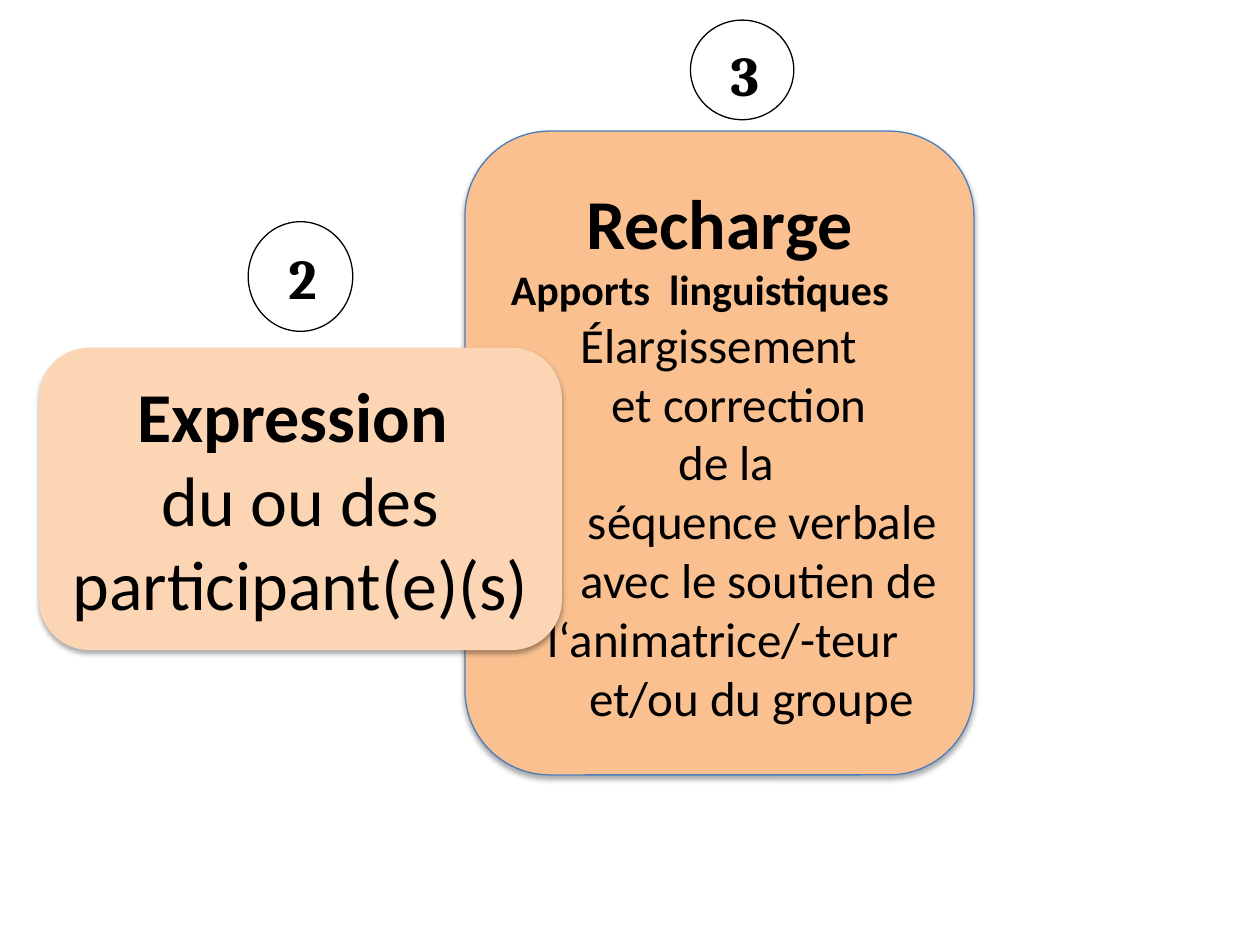
"""Build a slide with two overlapping numbered steps of a language activity."""
import lxml.etree
import pptx
import pptx.dml.color
import pptx.enum.shapes
import pptx.enum.text
import pptx.oxml.ns
import pptx.util

Inches = pptx.util.Inches
Pt = pptx.util.Pt
SHAPE = pptx.enum.shapes.MSO_SHAPE
ANCHOR = pptx.enum.text.MSO_ANCHOR
ALIGN = pptx.enum.text.PP_ALIGN
LEFT, CENTER, RIGHT = ALIGN.LEFT, ALIGN.CENTER, ALIGN.RIGHT


def rgb(value):
    """Turn a hex string into a colour."""
    return pptx.dml.color.RGBColor.from_string(value)


def add_block(kind, box, fill, line, anchor, font, paragraphs):
    """Add a filled shape with its paragraphs and return it."""
    s = slide.shapes.add_shape(kind, *[Inches(v) for v in box])
    s.shadow.inherit = False
    s.fill.solid()
    s.fill.fore_color.rgb = rgb(fill)
    if line:
        s.line.color.rgb = rgb(line)
        s.line.width = Pt(0.75)
    else:
        s.line.fill.background()
    tf = s.text_frame
    tf.word_wrap = True
    tf.vertical_anchor = anchor
    for i, (text, size, bold, align, indent) in enumerate(paragraphs):
        p = tf.add_paragraph() if i else tf.paragraphs[0]
        p.alignment = align
        if indent:
            p._p.get_or_add_pPr().set("marL", str(Inches(indent)))
        r = p.add_run()
        r.text = text
        r.font.name = font
        r.font.size = Pt(size)
        r.font.bold = bold
        r.font.color.rgb = rgb("000000")
    return s


prs = pptx.Presentation()
prs.slide_width = Inches(10)
prs.slide_height = Inches(7.5)
slide = prs.slides.add_slide(prs.slide_layouts[6])

recharge = [
    ("Recharge", 40, True, CENTER, 0),
    ("Apports  linguistiques", 24, True, LEFT, 0.07),
    ("Élargissement", 28, False, LEFT, 0.62),
    ("et correction", 28, False, LEFT, 0.87),
    ("de la", 28, False, LEFT, 1.4),
    ("séquence verbale", 28, False, RIGHT, 0),
    ("avec le soutien de", 28, False, RIGHT, 0),
    ("l‘animatrice/-teur", 28, False, LEFT, 0.36),
    ("et/ou du groupe", 28, False, LEFT, 0.69),
]
expression = [
    ("Expression ", 40, True, CENTER, 0),
    ("du ou des", 40, False, CENTER, 0),
    ("participant(e)(s)", 40, False, CENTER, 0),
]
steps = [
    ((3.69, 1.04, 4.04, 5.11), "FAC090", "4B7EBC", recharge),
    ((0.31, 2.76, 4.15, 2.4), "FCD5B5", None, expression),
]
for box, fill, line, paragraphs in steps:
    s = add_block(SHAPE.ROUNDED_RECTANGLE, box, fill, line, ANCHOR.MIDDLE, "Calibri", paragraphs)
    effects = s._element.spPr.find(pptx.oxml.ns.qn("a:effectLst"))
    shadow = lxml.etree.SubElement(
        effects, pptx.oxml.ns.qn("a:outerShdw"),
        blurRad=str(Pt(3.1)), dist=str(Pt(1.8)), dir="5400000", rotWithShape="0")
    color = lxml.etree.SubElement(shadow, pptx.oxml.ns.qn("a:srgbClr"), val="000000")
    lxml.etree.SubElement(color, pptx.oxml.ns.qn("a:alpha"), val="35000")

for number, box in [("2", (1.97, 1.76, 0.83, 0.87)), ("3", (5.48, 0.16, 0.82, 0.79))]:
    add_block(SHAPE.OVAL, box, "FFFFFF", "000000", ANCHOR.TOP, "Cambria",
              [(number, 32, True, LEFT, 0.1)])

prs.save("out.pptx")
